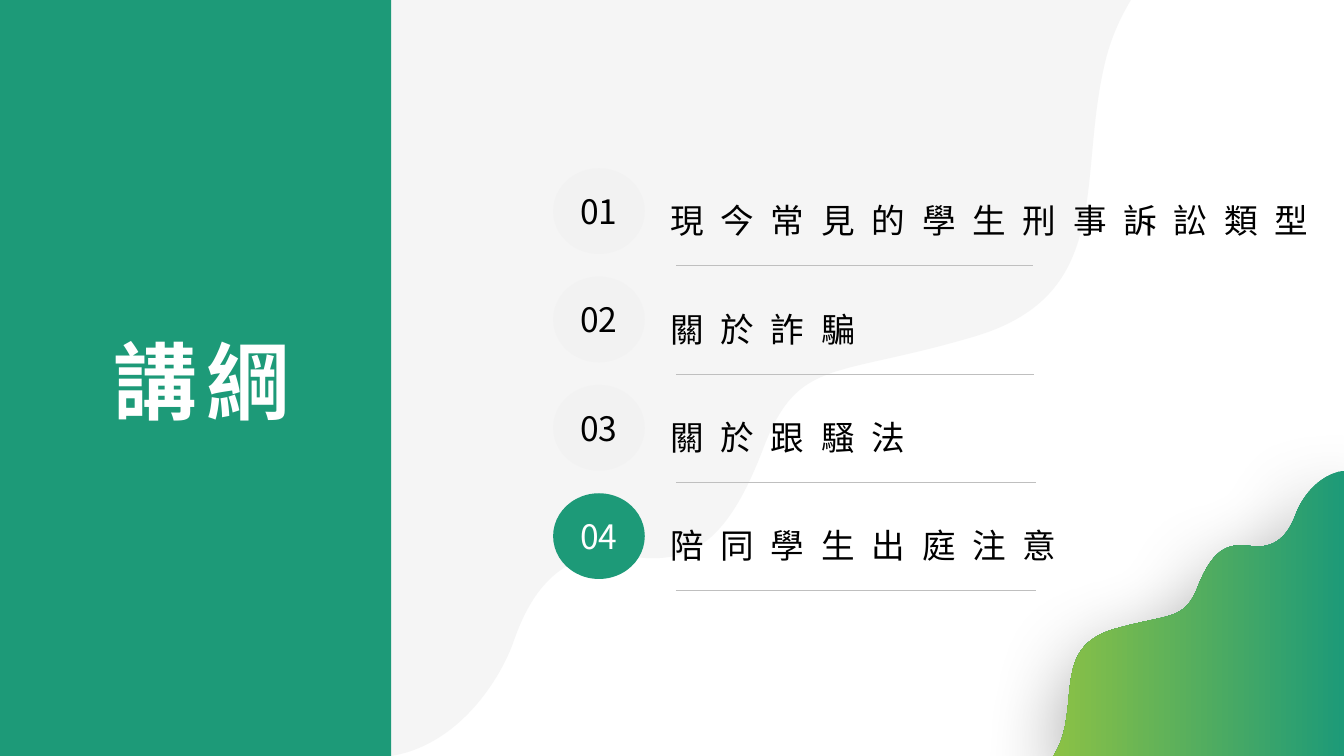
"""Build the outline slide: title panel, two waves and a four-item agenda."""
import pptx
import pptx.dml.color
import pptx.enum.shapes
import pptx.enum.text
import pptx.oxml
import pptx.oxml.ns
import pptx.util
from dataclasses import dataclass
from lxml import etree

Cm = pptx.util.Cm
qn = pptx.oxml.ns.qn
SHAPE = pptx.enum.shapes.MSO_SHAPE
ANCHOR = pptx.enum.text.MSO_ANCHOR
ALIGN = pptx.enum.text.PP_ALIGN

TITLE = "講綱"
AGENDA = [
    {"topic": "現今常見的學生刑事訴訟類型", "width": 17.22, "rule_end": 26.04},
    {"topic": "關於詐騙", "width": 11.15, "rule_end": 26.07},
    {"topic": "關於跟騷法", "width": 10.72, "rule_end": 26.11},
    {"topic": "陪同學生出庭注意", "width": 11.81, "rule_end": 26.11},
]
CURRENT = 4

SLIDE_W, SLIDE_H = 33.87, 19.05
PANEL_W = 9.86
FIRST_TOP, ROW_PITCH = 4.24, 2.73
BADGE_LEFT, BADGE_W, BADGE_H = 13.94, 2.31, 2.16
TOPIC_LEFT, TOPIC_DROP, TOPIC_H = 16.64, 0.48, 1.19
RULE_LEFT, RULE_DROP = 17.03, 2.45

WAVE_CORNER, WAVE_START = (0, 0), (0, 100)
WAVE_CURVES = [
    ((9.3, 98.5), (14.9, 89.6), (16.6, 84.7)),
    ((19.3, 77.1), (24, 72.3), (32.3, 73.6)),
    ((40.5, 74.8), (45.5, 71.9), (50.5, 58.8)),
    ((55.2, 47.3), (59.9, 50), (78.9, 44.5)),
    ((98, 38.9), (92.6, 23.6), (96.6, 7.9)),
    ((97.4, 4.8), (98.6, 2.3), (100, 0)),
]


@dataclass(frozen=True)
class Theme:
    """Colours, font and type sizes."""
    green: str = "1D9A78"
    lime: str = "8BC145"
    pale: str = "F2F2F2"
    rule: str = "BFBFBF"
    black: str = "000000"
    white: str = "FFFFFF"
    font: str = "Noto Sans CJK SC"
    title_size: int = 60
    body_size: int = 24


THEME = Theme()


def rgb(colour):
    """Turn a hex string into a colour."""
    return pptx.dml.color.RGBColor.from_string(colour)


def add_wave(slide, corner, extent):
    """Add the wave from a corner; a negative extent runs left or up."""
    def place(point):
        return tuple(int(Cm(corner[axis] + extent[axis] * point[axis] / 100))
                     for axis in (0, 1))

    ends = [WAVE_START, *(curve[-1] for curve in WAVE_CURVES), WAVE_CORNER]
    builder = slide.shapes.build_freeform(*place(WAVE_CORNER))
    builder.add_line_segments([place(end) for end in ends], close=True)
    wave = builder.convert_to_shape()
    sides = list(wave._element.iter(qn("a:lnTo")))[1:]
    for side, curve in zip(sides, WAVE_CURVES):
        side.tag = qn("a:cubicBezTo")
        side.clear()
        for point in curve:
            x, y = place(point)
            etree.SubElement(side, qn("a:pt"), x=str(x - wave.left), y=str(y - wave.top))
    wave.shadow.inherit = False
    wave.line.fill.background()
    return wave


def add_filled(slide, preset, box, colour):
    """Add a flat preset shape without outline."""
    shape = slide.shapes.add_shape(preset, *map(Cm, box))
    shape.shadow.inherit = False
    shape.fill.solid()
    shape.fill.fore_color.rgb = rgb(colour)
    shape.line.fill.background()
    return shape


def write(shape, text, size, colour, align, anchor, bold=False, spacing=0):
    """Fill a shape with one line of formatted text."""
    frame = shape.text_frame
    frame.text = text
    frame.word_wrap = True
    frame.vertical_anchor = anchor
    paragraph = frame.paragraphs[0]
    paragraph.alignment = align
    run = paragraph.runs[0]
    run.font.size = pptx.util.Pt(size)
    run.font.bold = bold
    run.font.color.rgb = rgb(colour)
    run.font.name = THEME.font
    properties = run.font._element
    properties.set("spc", str(spacing * 100))
    east_asian = pptx.oxml.parse_xml(
        f'<a:ea {pptx.oxml.ns.nsdecls("a")} typeface="{THEME.font}"/>')
    properties.find(qn("a:latin")).addnext(east_asian)
    return paragraph


def add_background(slide):
    """Add the pale wave, the green hill and the title panel."""
    pale_wave = add_wave(slide, (PANEL_W, 0), (18.64, SLIDE_H))
    pale_wave.fill.solid()
    pale_wave.fill.fore_color.rgb = rgb(THEME.pale)
    pale_colour = pale_wave._element.spPr.find(qn("a:solidFill"))[0]
    etree.SubElement(pale_colour, qn("a:alpha"), val="75000")

    hill = add_wave(slide, (SLIDE_W, SLIDE_H), (-7.32, -7.19))
    hill.fill.gradient()
    hill.fill.gradient_angle = 180
    for stop, colour in zip(hill.fill.gradient_stops, (THEME.green, THEME.lime)):
        stop.color.rgb = rgb(colour)
    blur, distance = pptx.util.Pt(60), pptx.util.Pt(20)
    hill._element.spPr.find(qn("a:effectLst")).append(pptx.oxml.parse_xml(
        f'<a:outerShdw {pptx.oxml.ns.nsdecls("a")} blurRad="{int(blur)}" '
        f'dist="{int(distance)}" dir="5400000" rotWithShape="0">'
        f'<a:srgbClr val="{THEME.black}"><a:alpha val="40000"/></a:srgbClr>'
        '</a:outerShdw>'))

    add_filled(slide, SHAPE.RECTANGLE, (0, 0, PANEL_W, SLIDE_H), THEME.green)


def add_agenda_row(slide, number, item):
    """Add one numbered topic with the rule under it."""
    top = FIRST_TOP + (number - 1) * ROW_PITCH
    is_current = number == CURRENT
    badge = add_filled(slide, SHAPE.OVAL, (BADGE_LEFT, top, BADGE_W, BADGE_H),
                       THEME.green if is_current else THEME.pale)
    write(badge, f"{number:02}", THEME.body_size,
          THEME.white if is_current else THEME.black, ALIGN.CENTER, ANCHOR.MIDDLE)

    topic = slide.shapes.add_textbox(
        *map(Cm, (TOPIC_LEFT, top + TOPIC_DROP, item["width"], TOPIC_H)))
    paragraph = write(topic, item["topic"], THEME.body_size, THEME.black,
                      ALIGN.LEFT, ANCHOR.TOP, spacing=12)
    paragraph.line_spacing = 1.2


def add_rule(slide, number, item):
    """Add the thin rule under a topic."""
    rule_y = FIRST_TOP + (number - 1) * ROW_PITCH + RULE_DROP
    rule = slide.shapes.add_connector(
        pptx.enum.shapes.MSO_CONNECTOR.STRAIGHT,
        *map(Cm, (RULE_LEFT, rule_y, item["rule_end"], rule_y)))
    rule.line.color.rgb = rgb(THEME.rule)
    rule.line.width = pptx.util.Pt(0.25)
    etree.SubElement(rule._element.spPr, qn("a:effectLst"))


def add_title(slide):
    """Add the title on the green panel."""
    title = slide.shapes.add_textbox(*map(Cm, (1.96, 8.28, 5.97, 2.57)))
    write(title, TITLE, THEME.title_size, THEME.white, ALIGN.CENTER, ANCHOR.MIDDLE,
          bold=True, spacing=6)
    frame = title.text_frame
    frame.auto_size = pptx.enum.text.MSO_AUTO_SIZE.SHAPE_TO_FIT_TEXT
    frame.margin_left = Cm(0.3)
    frame.margin_top = frame.margin_right = frame.margin_bottom = 0


def main():
    """Build and save the slide."""
    deck = pptx.Presentation()
    deck.slide_width, deck.slide_height = Cm(SLIDE_W), Cm(SLIDE_H)
    slide = deck.slides.add_slide(deck.slide_layouts[6])
    add_background(slide)
    for add_part in (add_agenda_row, add_rule):
        for number, item in enumerate(AGENDA, start=1):
            add_part(slide, number, item)
    add_title(slide)
    deck.save("out.pptx")


if __name__ == "__main__":
    main()
